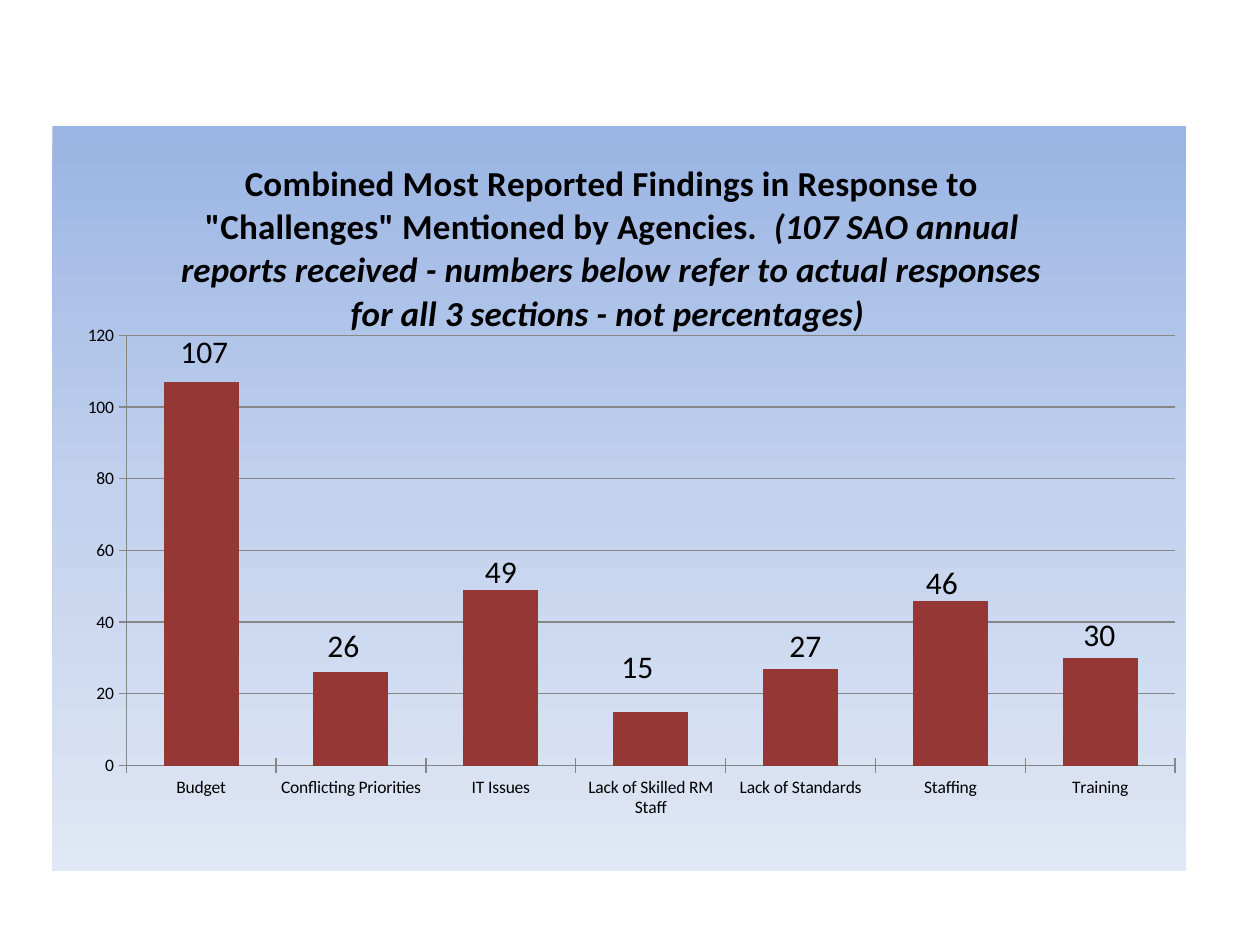
from dataclasses import dataclass

from lxml.etree import fromstring
from pptx import Presentation
from pptx.chart.data import CategoryChartData
from pptx.dml.color import RGBColor
from pptx.enum.chart import XL_CHART_TYPE as ChartType, XL_TICK_MARK as TickMark
from pptx.enum.text import MSO_AUTO_SIZE as AutoSize
from pptx.util import Pt

CHART_NS = "http://schemas.openxmlformats.org/drawingml/2006/chart"
DRAW_NS = "http://schemas.openxmlformats.org/drawingml/2006/main"


@dataclass(frozen=True)
class Theme:
    font: str = "Calibri"
    ink: str = "000000"
    bar: str = "953735"
    rule: str = "868686"
    backdrop: tuple = ((0, "9AB5E4"), (50, "C2D1ED"), (100, "E1E8F5"))
    title_size: int = 20
    value_size: int = 18
    axis_size: int = 10
    rule_width: float = 0.75


# challenge, responses, left and top of its value label in points
CHALLENGES = [
    ("Budget", 107, 96, 186),
    ("Conflicting Priorities", 26, 180, 354),
    ("IT Issues", 49, 270, 312),
    ("Lack of Skilled RM Staff", 15, 348, 366),
    ("Lack of Standards", 27, 444, 354),
    ("Staffing", 46, 522, 318),
    ("Training", 30, 612, 348),
]
HEADLINE = 'Combined Most Reported Findings in Response to "Challenges" Mentioned by Agencies.  '
REMARK = ("(107 SAO annual reports received - numbers below refer to actual "
          "responses for all 3 sections - not percentages) ")


def style_font(font, theme, size, bold=False, italic=False):
    font.name, font.size = theme.font, Pt(size)
    font.bold, font.italic = bold, italic
    font.color.rgb = RGBColor.from_string(theme.ink)


def add_text(paragraph, text, **style):
    run = paragraph.add_run()
    run.text = text
    style_font(run.font, **style)


def set_layout(parent, index, **settings):
    """Replace the automatic layout of a chart part with a manual one."""
    for layout in parent.findall(f"{{{CHART_NS}}}layout"):
        parent.remove(layout)
    parts = "".join(f'<c:{key} val="{value}"/>' for key, value in settings.items())
    parent.insert(index, fromstring(
        f'<c:layout xmlns:c="{CHART_NS}"><c:manualLayout>{parts}'
        "</c:manualLayout></c:layout>"))


class SlideBuilder:
    def __init__(self, slide, theme):
        self.slide = slide
        self.theme = theme

    def column_chart(self, left, top, width, height, rows):
        data = CategoryChartData()
        data.categories = [row[0] for row in rows]
        data.add_series("Series 1", [row[1] for row in rows])
        chart = self.slide.shapes.add_chart(
            ChartType.COLUMN_CLUSTERED, Pt(left), Pt(top), Pt(width), Pt(height), data).chart
        chart.has_legend = False
        style_font(chart.font, self.theme, self.theme.axis_size)
        plot = chart.plots[0]
        plot.gap_width = 100
        plot.vary_by_categories = False
        fill = plot.series[0].format.fill
        fill.solid()
        fill.fore_color.rgb = RGBColor.from_string(self.theme.bar)
        chart.value_axis.has_major_gridlines = True
        chart.value_axis.minimum_scale = 0
        chart.value_axis.maximum_scale = 120
        chart.value_axis.major_unit = 20
        for axis in (chart.category_axis, chart.value_axis):
            axis.major_tick_mark = TickMark.CROSS
            self.rule(axis.format.line)
        self.rule(chart.value_axis.major_gridlines.format.line)
        set_layout(chart.element.chart.plotArea, 0, layoutTarget="inner",
                   xMode="edge", yMode="edge", x=0.065, y=0.281, w=0.925, h=0.577)
        self.gradient(chart)
        return chart

    def rule(self, line):
        line.color.rgb = RGBColor.from_string(self.theme.rule)
        line.width = Pt(self.theme.rule_width)

    def gradient(self, chart):
        stops = "".join(
            f'<a:gs pos="{place * 1000}"><a:srgbClr val="{color}"/></a:gs>'
            for place, color in self.theme.backdrop)
        chart.element.chart.addnext(fromstring(
            f'<c:spPr xmlns:c="{CHART_NS}" xmlns:a="{DRAW_NS}"><a:gradFill><a:gsLst>{stops}'
            '</a:gsLst><a:lin ang="5400000" scaled="0"/></a:gradFill>'
            "<a:ln><a:noFill/></a:ln></c:spPr>"))

    def chart_title(self, chart, headline, remark):
        title = chart.chart_title
        paragraph = title.text_frame.paragraphs[0]
        style = dict(theme=self.theme, size=self.theme.title_size, bold=True)
        add_text(paragraph, headline, **style)
        add_text(paragraph, remark, italic=True, **style)
        set_layout(title.element, 1, xMode="edge", yMode="edge", x=0.11, y=0.04)

    def value_label(self, left, top, value):
        box = self.slide.shapes.add_textbox(Pt(left), Pt(top), Pt(42), Pt(29))
        frame = box.text_frame
        frame.word_wrap = True
        frame.auto_size = AutoSize.SHAPE_TO_FIT_TEXT
        add_text(frame.paragraphs[0], str(value), theme=self.theme, size=self.theme.value_size)


def main():
    deck = Presentation()
    deck.slide_width, deck.slide_height = Pt(720), Pt(540)
    builder = SlideBuilder(deck.slides.add_slide(deck.slide_layouts[6]), Theme())
    chart = builder.column_chart(30, 72, 648, 426, CHALLENGES)
    builder.chart_title(chart, HEADLINE, REMARK)
    for _, responses, left, top in CHALLENGES:
        builder.value_label(left, top, responses)
    deck.save("out.pptx")


if __name__ == "__main__":
    main()
